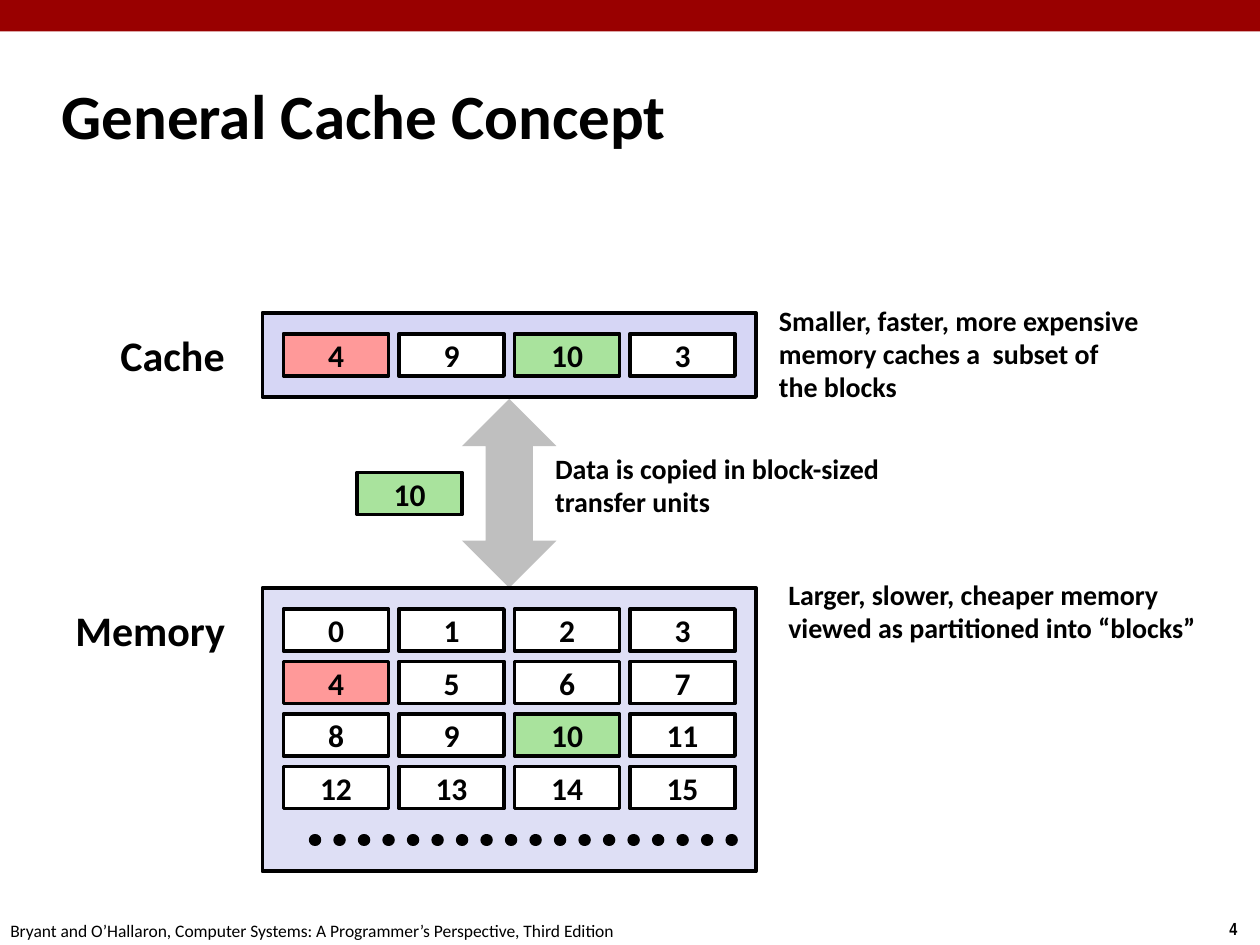
"""Build a slide on how a cache holds a subset of the blocks in memory."""
from lxml import etree
from pptx import Presentation
from pptx.dml.color import RGBColor
from pptx.enum.dml import MSO_LINE
from pptx.enum.shapes import MSO_CONNECTOR, MSO_SHAPE
from pptx.enum.text import MSO_ANCHOR, PP_ALIGN
from pptx.oxml.ns import qn
from pptx.util import Inches, Pt

RECT, ARROW = MSO_SHAPE.RECTANGLE, MSO_SHAPE.UP_DOWN_ARROW
STRAIGHT, DOTS = MSO_CONNECTOR.STRAIGHT, MSO_LINE.ROUND_DOT
TOP, MIDDLE = MSO_ANCHOR.TOP, MSO_ANCHOR.MIDDLE
LEFT, CENTER = PP_ALIGN.LEFT, PP_ALIGN.CENTER
BLACK, WHITE, RED, GREEN = "000000", "FFFFFF", "FF9999", "A9E39D"

deck = Presentation()
deck.slide_width, deck.slide_height = Inches(10), Inches(7.5)
page = deck.slides.add_slide(deck.slide_layouts[6])
UNIT = deck.slide_width / 120


def paint(fill, color):
    fill.solid()
    fill.fore_color.rgb = RGBColor.from_string(color)


def write(shape, lines, size, anchor=TOP, align=LEFT, wrap=True, spacing=1.0, bold=True, font="Calibri"):
    frame = shape.text_frame
    frame.word_wrap, frame.vertical_anchor = wrap, anchor
    for index, line in enumerate(lines):
        para = frame.add_paragraph() if index else frame.paragraphs[0]
        para.alignment, para.line_spacing = align, spacing
        span = para.add_run()
        span.text = line
        for name, value in {"size": Pt(size), "bold": bold, "name": font}.items():
            setattr(span.font, name, value)
        paint(span.font.fill, BLACK)


CELL_LEFT, CACHE_TOP, MEMORY_TOP = 27, 31.8, 58
COLUMN_STEP, ROW_STEP = 11, 5
HIGHLIGHTS = {4: RED, 10: GREEN}

boxes = [
    (RECT, 0, 0, 120, 3, "990000", False, None),
    (ARROW, 44, 38, 9, 18, "BFBFBF", False, None),
    (RECT, 25, 56, 47, 27, "DEDFF5", True, None),
    (RECT, 25, 29.8, 47, 8, "D6D6F5", True, None),
]
cells = [(CELL_LEFT + COLUMN_STEP * (number % 4), MEMORY_TOP + ROW_STEP * (number // 4), number)
         for number in range(16)]
cells += [(CELL_LEFT + COLUMN_STEP * column, CACHE_TOP, number)
          for column, number in enumerate([4, 9, 10, 3])]
cells.append((34, 45, 10))
boxes += [(RECT, left, top, 10, 4, HIGHLIGHTS.get(number, WHITE), True, number)
          for left, top, number in cells]

for kind, left, top, width, height, color, outlined, number in boxes:
    box = page.shapes.add_shape(kind, *(int(UNIT * size) for size in (left, top, width, height)))
    box.shadow.inherit = False
    paint(box.fill, color)
    if outlined:
        paint(box.line.fill, BLACK)
        box.line.width = Pt(2.25)
    else:
        box.line.fill.background()
    if number is not None:
        write(box, [str(number)], 18, MIDDLE, CENTER)

more = page.shapes.add_connector(STRAIGHT, *(int(UNIT * size) for size in (30, 80, 70, 80)))
paint(more.line.fill, BLACK)
more.line.width, more.line.dash_style = Pt(7), DOTS
more.line._get_or_add_ln().set("cap", "rnd")
etree.SubElement(more._element.spPr, qn("a:effectLst"))

NOTE = {"anchor": MIDDLE, "spacing": 0.98}
labels = [
    (4.7, 5.9, 99.6, 10, ["General Cache Concept"], 36, {"anchor": MIDDLE}),
    (10.3, 30.8, 12.5, 6, ["Cache"], 24, {"wrap": False}),
    (6, 57, 16.8, 6, ["Memory"], 24, {"wrap": False}),
    (73, 28.4, 38.5, 10.7,
     ["Smaller, faster, more expensive", "memory caches a  subset of", "the blocks"],
     16, {**NOTE, "wrap": False}),
    (51.7, 42.5, 37.2, 7.6, ["Data is copied in block-sized transfer units"], 16, NOTE),
    (73.9, 54.5, 42, 7.6,
     ["Larger, slower, cheaper memory", "viewed as partitioned into “blocks”"],
     16, {**NOTE, "wrap": False}),
    (-0.2, 87, 61, 3.2,
     ["Bryant and O’Hallaron, Computer Systems: A Programmer’s Perspective, Third Edition"],
     10, {"wrap": False, "bold": False}),
    (115.9, 86.8, 4.1, 3.2, ["4"], 10, {"wrap": False, "font": "Arial Narrow"}),
]
for left, top, width, height, lines, size, style in labels:
    label = page.shapes.add_textbox(*(int(UNIT * length) for length in (left, top, width, height)))
    write(label, lines, size, **style)

deck.save("out.pptx")
